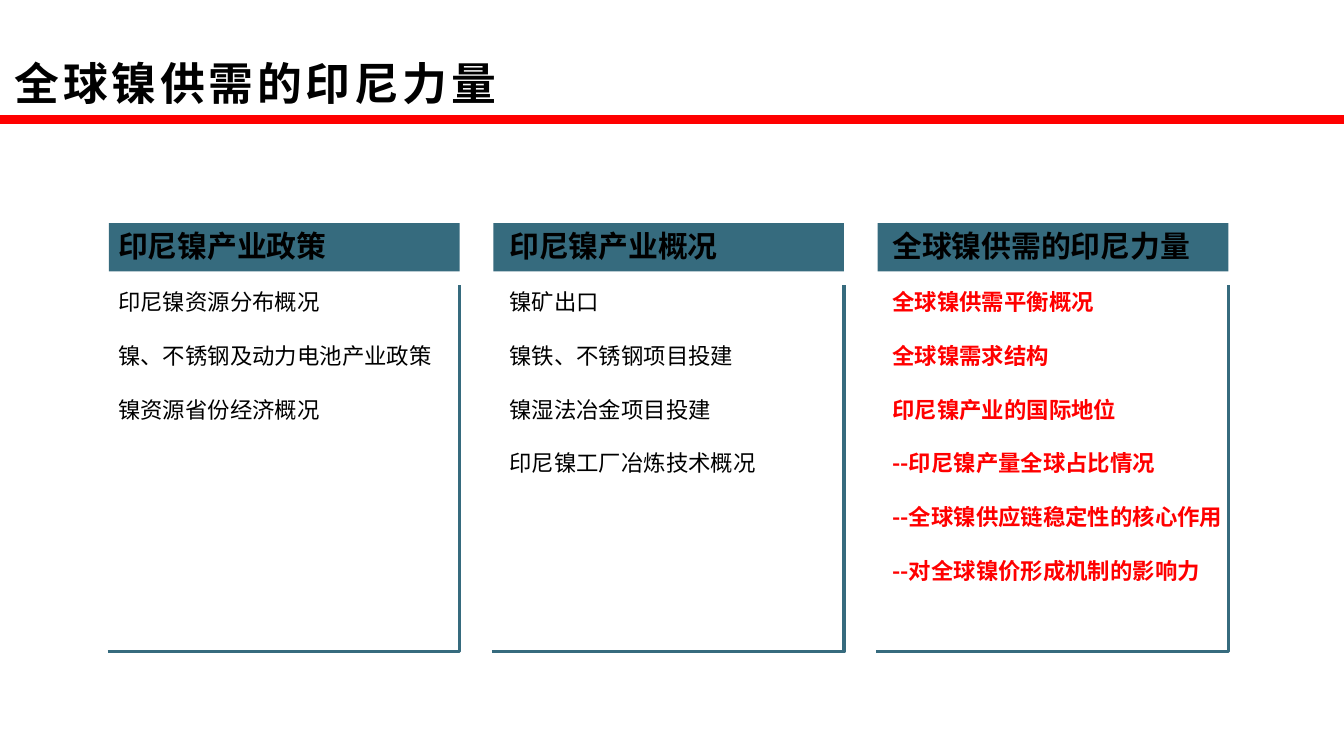
import pptx
import pptx.util
import pptx.dml.color
import pptx.enum.shapes
import pptx.enum.text
import pptx.oxml.ns
from lxml import etree

Inches = pptx.util.Inches
Pt = pptx.util.Pt
RGBColor = pptx.dml.color.RGBColor
Anchor = pptx.enum.text.MSO_ANCHOR
qn = pptx.oxml.ns.qn

RED = RGBColor(0xFF, 0x00, 0x00)
TEAL = RGBColor(0x36, 0x6B, 0x7E)
BLACK = RGBColor(0x00, 0x00, 0x00)
FONT = "Noto Sans CJK SC"

SLIDE_WIDTH = 10
SLIDE_HEIGHT = SLIDE_WIDTH * 9 / 16
TITLE = "全球镍供需的印尼力量"
COLUMN_LEFT, COLUMN_TOP, COLUMN_WIDTH, COLUMN_HEIGHT = 0.81, 1.66, 2.61, 3.19
COLUMN_PITCH = 2.86
COLUMNS = [
    ("印尼镍产业政策", 0.07, BLACK, False,
     ["印尼镍资源分布概况", "镍、不锈钢及动力电池产业政策", "镍资源省份经济概况"]),
    ("印尼镍产业概况", 0.12, BLACK, False,
     ["镍矿出口", "镍铁、不锈钢项目投建", "镍湿法冶金项目投建", "印尼镍工厂冶炼技术概况"]),
    (TITLE, 0.11, RED, True,
     ["全球镍供需平衡概况", "全球镍需求结构", "印尼镍产业的国际地位",
      "--印尼镍产量全球占比情况", "--全球镍供应链稳定性的核心作用",
      "--对全球镍价形成机制的影响力"]),
]


def add_text(slide, lines, left, top, width, height, size, color=BLACK, bold=False,
             anchor=Anchor.TOP, margins=(0, 0, 0, 0), line_height=None, gap=0, tracking=0):
    shape = slide.shapes.add_textbox(Inches(left), Inches(top), Inches(width), Inches(height))
    frame = shape.text_frame
    frame.word_wrap = True
    frame.vertical_anchor = anchor
    (frame.margin_left, frame.margin_top,
     frame.margin_right, frame.margin_bottom) = [Inches(margin) for margin in margins]
    for index, line in enumerate(lines):
        paragraph = frame.paragraphs[0] if index == 0 else frame.add_paragraph()
        if line_height:
            paragraph.line_spacing = Pt(line_height)
        paragraph.space_before = Pt(gap if index else 0)
        run = paragraph.add_run()
        run.text = line
        run.font.size = Pt(size)
        run.font.bold = bold
        run.font.color.rgb = color
        run.font.name = FONT
        properties = run.font._element
        etree.SubElement(properties, qn("a:ea")).set("typeface", FONT)
        if tracking:
            properties.set("spc", str(tracking * 100))
    return shape


def add_header(slide, left, top, width, height):
    rule_top = Inches(top + height + 0.01)
    rule = slide.shapes.add_connector(
        pptx.enum.shapes.MSO_CONNECTOR.STRAIGHT,
        Inches(left), rule_top, Inches(left + width), rule_top)
    rule.line.color.rgb = RED
    rule.line.width = Pt(5)
    etree.SubElement(rule._element.spPr, qn("a:effectLst"))
    add_text(slide, [TITLE], left, top, width, height, size=24, bold=True,
             anchor=Anchor.MIDDLE, margins=(0.11, 0.04, 0.08, 0.04), tracking=2)


def add_column(slide, left, top, width, height, heading, inset, color, bold, items):
    band = slide.shapes.add_shape(
        pptx.enum.shapes.MSO_SHAPE.RECTANGLE,
        Inches(left), Inches(top), Inches(width), Inches(0.36))
    band.shadow.inherit = False
    band.fill.solid()
    band.fill.fore_color.rgb = TEAL
    band.line.fill.background()

    add_text(slide, [heading], left + inset, top + 0.03, 2.57, 0.27, size=16,
             bold=True, anchor=Anchor.MIDDLE)
    add_text(slide, items, left + inset, top + 0.48, 2.51, 0.4 * len(items) - 0.2, size=12,
             color=color, bold=bold, line_height=14.45, gap=14.45)

    right, bottom = left + width, top + height
    builder = slide.shapes.build_freeform(Inches(left - 0.01), Inches(bottom))
    builder.add_line_segments(
        [(Inches(right), Inches(bottom)), (Inches(right), Inches(top + 0.46))], close=False)
    corner = builder.convert_to_shape()
    corner.shadow.inherit = False
    corner.fill.background()
    corner.line.color.rgb = TEAL
    corner.line.width = Pt(1.75)


def main():
    presentation = pptx.Presentation()
    presentation.slide_width = Inches(SLIDE_WIDTH)
    presentation.slide_height = Inches(SLIDE_HEIGHT)
    slide = presentation.slides.add_slide(presentation.slide_layouts[6])
    add_header(slide, 0, 0.35, SLIDE_WIDTH, 0.53)
    for index, column in enumerate(COLUMNS):
        add_column(slide, COLUMN_LEFT + index * COLUMN_PITCH, COLUMN_TOP,
                   COLUMN_WIDTH, COLUMN_HEIGHT, *column)
    presentation.save("out.pptx")


if __name__ == "__main__":
    main()
